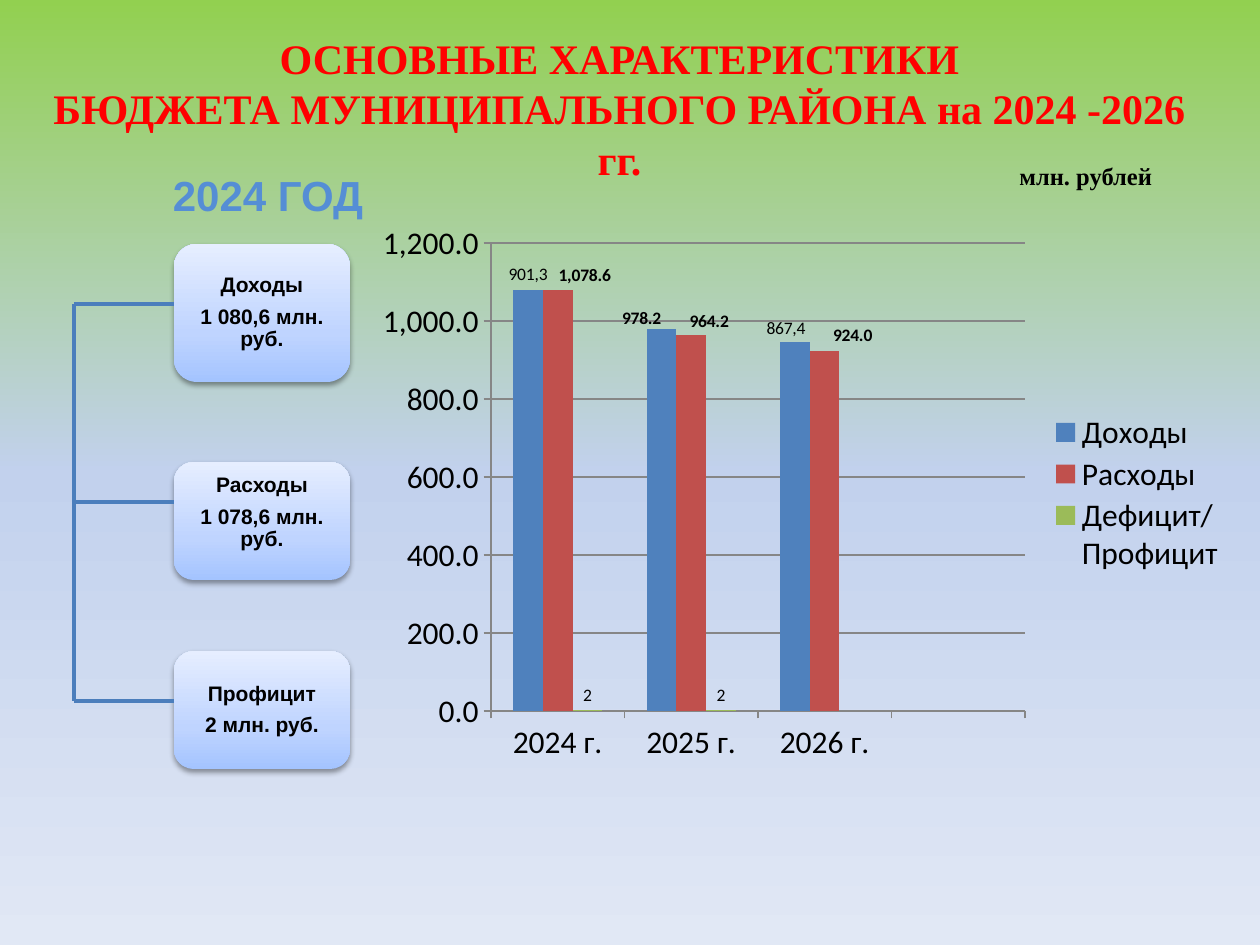
from lxml import etree
from pptx import Presentation, util as u
from pptx.chart.data import CategoryChartData
from pptx.dml.color import RGBColor
from pptx.enum import chart as charts, shapes, text
from pptx.oxml import parse_xml
from pptx.oxml.ns import nsdecls, qn

PX_PER_INCH = 126
CENTER = text.PP_ALIGN.CENTER
TOP, MIDDLE = text.MSO_ANCHOR.TOP, text.MSO_ANCHOR.MIDDLE


def px(length):
    return u.Emu(round(length * u.Inches(1) / PX_PER_INCH))


def color(value):
    return RGBColor.from_string(value)


def set_gradient(fill, element, stops, angle):
    """Fill with (percent, colour) stops; angle runs counter-clockwise."""
    fill.gradient()
    fill.gradient_angle = angle
    stop_list = next(element.iter(qn("a:gsLst")))
    for stop in list(stop_list):
        stop_list.remove(stop)
    for percent, value in stops:
        stop = etree.SubElement(stop_list, qn("a:gs"), pos=str(percent * 1000))
        etree.SubElement(stop, qn("a:srgbClr"), val=value)


def set_layout(parent, index, inner=False, **fractions):
    """Place a chart part by fractions of the chart's size."""
    for old in parent.findall(qn("c:layout")):
        parent.remove(old)
    layout = etree.Element(qn("c:layout"))
    manual = etree.SubElement(layout, qn("c:manualLayout"))
    if inner:
        etree.SubElement(manual, qn("c:layoutTarget"), val="inner")
    if "w" in fractions:
        for mode in ("xMode", "yMode"):
            etree.SubElement(manual, qn("c:" + mode), val="edge")
    for name, value in fractions.items():
        etree.SubElement(manual, qn("c:" + name), val=f"{value:.4f}")
    parent.insert(index, layout)


class BudgetSlide:
    font_name = "Arial"
    line_color = "4B7EBC"
    axis_color = "868686"
    box_stops = [(0, "A4C4FF"), (35, "BFD4FF"), (100, "E6EEFF")]
    background_stops = [(0, "92D050"), (50, "C2D1ED"), (100, "E1E8F5")]

    def __init__(self, presentation):
        self.slide = presentation.slides.add_slide(presentation.slide_layouts[6])
        set_gradient(self.slide.background.fill, self.slide._element,
                     self.background_stops, 270)

    def set_text(self, frame, lines, size, value="000000", font=None, align=CENTER):
        frame.word_wrap = True
        for number, line in enumerate(lines):
            paragraph = frame.paragraphs[0] if number == 0 else frame.add_paragraph()
            paragraph.text = line
            paragraph.alignment = align
            paragraph.font.name = font or self.font_name
            paragraph.font.size = u.Pt(size)
            paragraph.font.bold = True
            paragraph.font.color.rgb = color(value)

    def label(self, left, top, width, height, lines, size, **style):
        box = self.slide.shapes.add_textbox(px(left), px(top), px(width), px(height))
        self.set_text(box.text_frame, lines, size, **style)
        return box

    def box(self, left, top, width, height, lines, anchor):
        box = self.slide.shapes.add_shape(shapes.MSO_SHAPE.ROUNDED_RECTANGLE,
                                          px(left), px(top), px(width), px(height))
        set_gradient(box.fill, box._element, self.box_stops, 90)
        box.line.fill.background()
        box._element.spPr.append(parse_xml(
            f'<a:effectLst {nsdecls("a")}><a:outerShdw blurRad="40000" dist="20000" '
            'dir="5400000" rotWithShape="0"><a:srgbClr val="000000">'
            '<a:alpha val="38000"/></a:srgbClr></a:outerShdw></a:effectLst>'))
        frame = box.text_frame
        frame.vertical_anchor = anchor
        frame.margin_left = frame.margin_right = px(7)
        frame.margin_top = frame.margin_bottom = px(7)
        self.set_text(frame, lines, 12)
        for paragraph in frame.paragraphs:
            paragraph.line_spacing = 0.9
            paragraph.space_after = u.Pt(5)

    def line(self, x1, y1, x2, y2):
        line = self.slide.shapes.add_connector(
            shapes.MSO_CONNECTOR.STRAIGHT, px(x1), px(y1), px(x2), px(y2))
        line.line.color.rgb = color(self.line_color)
        line.line.width = u.Pt(2.25)
        etree.SubElement(line._element.spPr, qn("a:effectLst"))

    def chart(self, left, top, width, height, categories, series_rows):
        data = CategoryChartData()
        data.categories = categories
        for name, values, *_ in series_rows:
            data.add_series(name, values)
        chart = self.slide.shapes.add_chart(
            charts.XL_CHART_TYPE.COLUMN_CLUSTERED,
            px(left), px(top), px(width), px(height), data).chart
        chart.has_title = False
        chart.font.name = "Calibri"
        chart.font.size = u.Pt(18)
        chart.font.color.rgb = color("000000")
        chart.has_legend = True
        chart.legend.position = charts.XL_LEGEND_POSITION.RIGHT
        chart.legend.include_in_layout = False
        set_layout(chart.legend._element, 1, x=682 / width, y=197 / height,
                   w=180 / width, h=166 / height)
        set_layout(next(chart._chartSpace.iter(qn("c:plotArea"))), 0, inner=True,
                   x=126 / width, y=30 / height, w=534 / width, h=468 / height)

        value_axis = chart.value_axis
        value_axis.minimum_scale, value_axis.maximum_scale = 0, 1200
        value_axis.major_unit = 200
        value_axis.tick_labels.number_format = "#,##0.0"
        value_axis.tick_labels.number_format_is_linked = False
        value_axis.major_gridlines.format.line.color.rgb = color(self.axis_color)
        for axis in (value_axis, chart.category_axis):
            axis.major_tick_mark = charts.XL_TICK_MARK.OUTSIDE
            axis.format.line.color.rgb = color(self.axis_color)

        plot = chart.plots[0]
        plot.gap_width, plot.overlap, plot.vary_by_categories = 150, 0, False
        for series, (_, _, fill, number_format, bold, labels) in zip(plot.series, series_rows):
            series.format.fill.solid()
            series.format.fill.fore_color.rgb = color(fill)
            series.invert_if_negative = False
            for index, (caption, dx, dy) in enumerate(labels):
                self.point_label(series, index, caption, number_format, bold,
                                 dx / width, dy / height)

    def point_label(self, series, index, caption, number_format, bold, dx, dy):
        """Label one column with its caption, or with its value if there is none."""
        label = series.points[index].data_label
        if caption:
            label.text_frame.text = caption
            font = label.text_frame.paragraphs[0].runs[0].font
        else:
            font = label.font
            font.bold = bold
        font.size = u.Pt(10)
        label.position = charts.XL_LABEL_POSITION.OUTSIDE_END
        element = next(item for item in series._element.iter(qn("c:dLbl"))
                       if item.find(qn("c:idx")).get("val") == str(index))
        set_layout(element, 1, x=dx, y=dy)
        if not caption:
            element.insert(2, parse_xml(
                f'<c:numFmt {nsdecls("c")} formatCode="{number_format}" sourceLinked="0"/>'))


def main():
    presentation = Presentation()
    presentation.slide_width, presentation.slide_height = px(1260), px(945)
    page = BudgetSlide(presentation)

    title = page.label(25, 26, 1221, 110,
                       ["ОСНОВНЫЕ ХАРАКТЕРИСТИКИ",
                        "БЮДЖЕТА МУНИЦИПАЛЬНОГО РАЙОНА на 2024 -2026 гг."],
                       24, value="FF0000", font="Times New Roman")
    first_line = title.text_frame.paragraphs[0]
    first_line._p.get_or_add_pPr().set("marR", str(px(32)))
    page.label(1007, 155, 198, 43, ["млн. рублей"], 14,
               font="Times New Roman", align=text.PP_ALIGN.LEFT)

    spine, box_left, box_width = 74, 174, 176
    boxes = [(244, 138, 304, MIDDLE, ["Доходы", "1 080,6 млн. руб."]),
             (462, 118, 502, TOP, ["Расходы", "1 078,6 млн. руб."]),
             (651, 118, 701, MIDDLE, ["Профицит", "2 млн. руб."])]
    for top, height, branch, anchor, lines in boxes:
        page.box(box_left, top, box_width, height, lines, anchor)
        page.line(spine, branch, box_left, branch)
    branches = [box[2] for box in boxes]
    for start, end in zip(branches, branches[1:]):
        page.line(spine, start, spine, end)

    page.label(134, 163, 268, 63, ["2024 ГОД"], 24, value="558ED5")
    page.chart(
        365, 213, 869, 559, ["2024 г.", "2025 г.", "2026 г.", ""],
        [("Доходы", (1080.6, 978.2, 947.1, None), "4F81BD", "#,##0.0", True,
          [("901,3", 0, 0), (None, -20, 4), ("867,4", -9, 2)]),
         ("Расходы", (1078.6, 964.2, 924, None), "C0504D", "#,##0.0", True,
          [(None, 27, 0), (None, 18, 1), (None, 28, 0)]),
         ("Дефицит/Профицит", (2, 2, None, None), "9BBB59", "General", False,
          [(None, 0, 0), (None, 0, 0)])])
    presentation.save("out.pptx")


if __name__ == "__main__":
    main()
